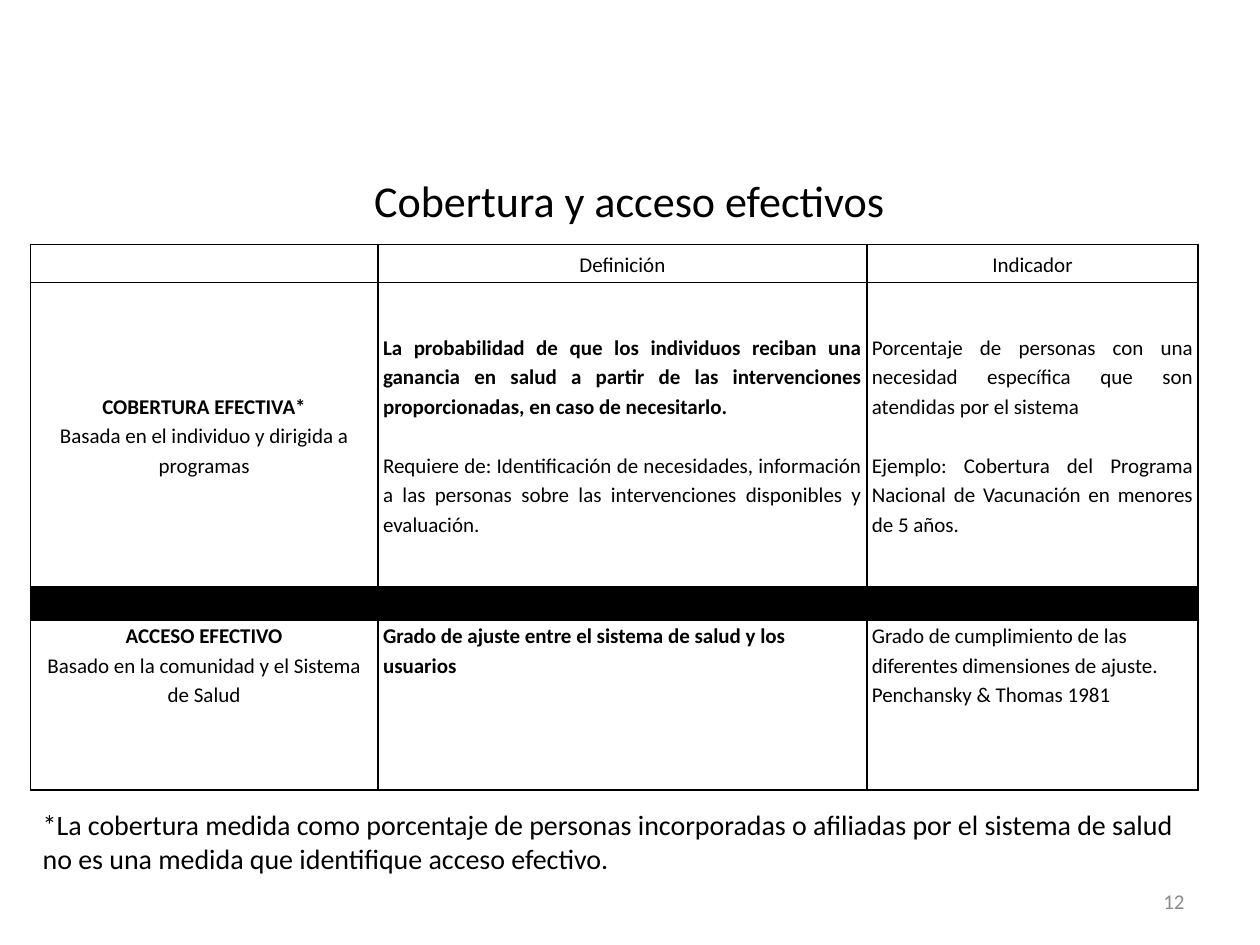
from lxml import etree
from pptx import Presentation
from pptx.dml.color import RGBColor
from pptx.enum.text import MSO_ANCHOR, PP_ALIGN
from pptx.oxml.ns import qn
from pptx.util import Inches, Pt

LEFT, CENTER, RIGHT, JUSTIFY = PP_ALIGN.LEFT, PP_ALIGN.CENTER, PP_ALIGN.RIGHT, PP_ALIGN.JUSTIFY
TOP, MIDDLE = MSO_ANCHOR.TOP, MSO_ANCHOR.MIDDLE

THEME = {
    "font": "Calibri",
    "ink": RGBColor(0, 0, 0),
    "muted": RGBColor(0x8C, 0x8C, 0x8C),
    "title": 25.2,
    "note": 16,
    "body": 12,
    "leading": 1.15,
    "paragraph_gap": 16.8,
    "border": 1,
}

COLUMNS = [2.76, 3.88, 2.63]
ROWS = [0.3, 2.42, 0.26, 1.35]
TABLE_LEFT, TABLE_TOP = 0.24, 1.94
DIVIDER_ROW = 2

# Each cell: alignment, anchor, then paragraphs of (text, bold, gap before).
CELLS = {
    (0, 1): (CENTER, MIDDLE, [("Definición", False, False)]),
    (0, 2): (CENTER, MIDDLE, [("Indicador", False, False)]),
    (1, 0): (CENTER, MIDDLE, [
        ("COBERTURA EFECTIVA*", True, False),
        ("Basada en el individuo y dirigida a programas", False, False),
    ]),
    (1, 1): (JUSTIFY, MIDDLE, [
        ("La probabilidad de que los individuos reciban una ganancia en salud a partir de "
         "las intervenciones proporcionadas, en caso de necesitarlo.", True, False),
        ("Requiere de: Identificación de necesidades, información a las personas sobre las "
         "intervenciones disponibles y evaluación.", False, True),
    ]),
    (1, 2): (JUSTIFY, MIDDLE, [
        ("Porcentaje de personas con una necesidad específica que son atendidas por el sistema",
         False, False),
        ("Ejemplo: Cobertura del Programa Nacional de Vacunación en menores de 5 años.",
         False, True),
    ]),
    (3, 0): (CENTER, TOP, [
        ("ACCESO EFECTIVO", True, False),
        ("Basado en la comunidad y el Sistema de Salud", False, False),
    ]),
    (3, 1): (LEFT, TOP, [
        ("Grado de ajuste entre el sistema de salud y los usuarios", True, False),
    ]),
    (3, 2): (LEFT, TOP, [
        ("Grado de cumplimiento de las diferentes dimensiones de ajuste.", False, False),
        ("Penchansky & Thomas 1981", False, False),
    ]),
}


def add_span(para, text, size, color=THEME["ink"], bold=False):
    span = para.add_run()
    span.text = text
    span.font.name = THEME["font"]
    span.font.size = Pt(size)
    span.font.bold = bold
    span.font.color.rgb = color


def add_borders(cell):
    properties = cell._tc.get_or_add_tcPr()
    for side in ("a:lnL", "a:lnR", "a:lnT", "a:lnB"):
        line = etree.SubElement(properties, qn(side), w=str(Pt(THEME["border"])))
        fill = etree.SubElement(line, qn("a:solidFill"))
        etree.SubElement(fill, qn("a:srgbClr"), val=str(THEME["ink"]))


deck = Presentation()
deck.slide_width, deck.slide_height = Inches(10), Inches(7.5)
page = deck.slides.add_slide(deck.slide_layouts[5])

title = page.shapes.title
title.left, title.top, title.width, title.height = map(Inches, (0.5, 1.32, 8.99, 0.54))
title.text_frame.vertical_anchor = MIDDLE
title_para = title.text_frame.paragraphs[0]
title_para.alignment = CENTER
add_span(title_para, "Cobertura y acceso efectivos", THEME["title"])

table = page.shapes.add_table(
    len(ROWS), len(COLUMNS), Inches(TABLE_LEFT), Inches(TABLE_TOP),
    Inches(sum(COLUMNS)), Inches(sum(ROWS))).table
table.first_row = table.horz_banding = False
for column, width in zip(table.columns, COLUMNS):
    column.width = Inches(width)
for row, height in zip(table.rows, ROWS):
    row.height = Inches(height)

for row in range(len(ROWS)):
    for column in range(len(COLUMNS)):
        cell = table.cell(row, column)
        cell.margin_left = cell.margin_right = Inches(0.04)
        cell.margin_top = cell.margin_bottom = 0
        add_borders(cell)
        if row == DIVIDER_ROW:
            cell.fill.solid()
            cell.fill.fore_color.rgb = THEME["ink"]
        else:
            cell.fill.background()
        frame = cell.text_frame
        if (row, column) not in CELLS:
            etree.SubElement(frame.paragraphs[0]._p, qn("a:endParaRPr"),
                             sz=str(THEME["body"] * 100))
            continue
        alignment, cell.vertical_anchor, lines = CELLS[row, column]
        for index, (text, bold, gap) in enumerate(lines):
            para = frame.add_paragraph() if index else frame.paragraphs[0]
            para.alignment = alignment
            para.line_spacing = THEME["leading"]
            if gap:
                para.space_before = Pt(THEME["paragraph_gap"])
            add_span(para, text, THEME["body"], bold=bold)

NOTE = ("*La cobertura medida como porcentaje de personas incorporadas o afiliadas por el "
        "sistema de salud no es una medida que identifique acceso efectivo.")
for place, text, size, color, alignment, anchor in [
    ((TABLE_LEFT, 6.36, 9.21, 0.64), NOTE, THEME["note"], THEME["ink"], LEFT, TOP),
    ((7.17, 6.95, 2.33, 0.4), "12", THEME["body"], THEME["muted"], RIGHT, MIDDLE),
]:
    box = page.shapes.add_textbox(*map(Inches, place))
    box.text_frame.word_wrap = True
    box.text_frame.vertical_anchor = anchor
    para = box.text_frame.paragraphs[0]
    para.alignment = alignment
    add_span(para, text, size, color)

deck.save("out.pptx")
